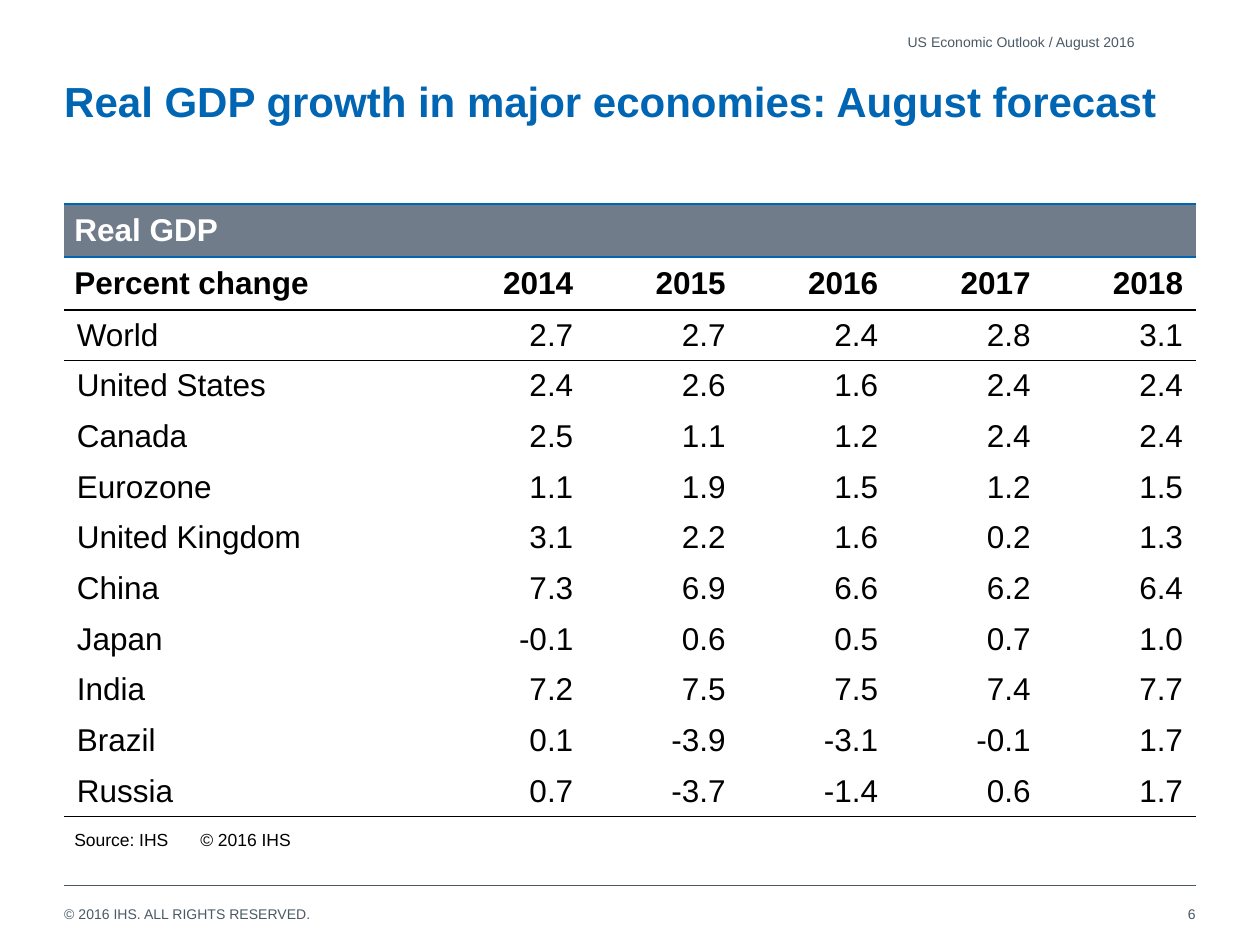
from lxml.etree import SubElement
from pptx import Presentation
from pptx.dml.color import RGBColor
from pptx.enum.shapes import MSO_CONNECTOR
from pptx.enum.text import MSO_ANCHOR, PP_ALIGN
from pptx.oxml import parse_xml
from pptx.oxml.ns import nsdecls, qn
from pptx.util import Inches, Pt

BLUE, GREY, SLATE, BLACK, WHITE = "0066B3", "495965", "707C8A", "000000", "FFFFFF"
LEFT, WIDTH = 0.51, 8.98
RIGHT = LEFT + WIDTH
TABLE_TOP, TABLE_HEIGHT = 1.62, 4.86
HEADER_HEIGHT, VALUE_WIDTH = 0.42, 1.21
NO_TABLE_STYLE = "{2D5ABB26-0587-4C30-8999-92F81FD0307C}"

TITLE = "Real GDP growth in major economies: August forecast"
ROWS = [
    ("Real GDP", "", "", "", "", ""),
    ("Percent change", "2014", "2015", "2016", "2017", "2018"),
    ("World", "2.7", "2.7", "2.4", "2.8", "3.1"),
    ("United States", "2.4", "2.6", "1.6", "2.4", "2.4"),
    ("Canada", "2.5", "1.1", "1.2", "2.4", "2.4"),
    ("Eurozone", "1.1", "1.9", "1.5", "1.2", "1.5"),
    ("United Kingdom", "3.1", "2.2", "1.6", "0.2", "1.3"),
    ("China", "7.3", "6.9", "6.6", "6.2", "6.4"),
    ("Japan", "-0.1", "0.6", "0.5", "0.7", "1.0"),
    ("India", "7.2", "7.5", "7.5", "7.4", "7.7"),
    ("Brazil", "0.1", "-3.9", "-3.1", "-0.1", "1.7"),
    ("Russia", "0.7", "-3.7", "-1.4", "0.6", "1.7"),
]
LAST = len(ROWS) - 1
RULES = {
    0: {"lnT": BLUE, "lnB": BLUE},
    1: {"lnT": BLUE, "lnB": BLACK},
    2: {"lnT": BLACK},
    LAST: {"lnB": BLACK},
}


def color(hex_value):
    return RGBColor.from_string(hex_value)


def style(paragraph, size, hex_value, bold=False, align=PP_ALIGN.LEFT):
    paragraph.alignment = align
    font = paragraph.font
    font.name, font.size, font.bold = "Arial", Pt(size), bold
    font.color.rgb = color(hex_value)


def set_frame(frame, inset, anchor):
    frame.word_wrap = True
    frame.vertical_anchor = anchor
    frame.margin_left = frame.margin_right = Inches(inset)
    frame.margin_top = frame.margin_bottom = Inches(inset)


def add_text(slide, text, box, size, hex_value, align=PP_ALIGN.LEFT,
             inset=0, anchor=MSO_ANCHOR.MIDDLE, tab=None):
    frame = slide.shapes.add_textbox(*map(Inches, box)).text_frame
    set_frame(frame, inset, anchor)
    paragraph = frame.paragraphs[0]
    paragraph.text = text
    if tab:
        tabs = SubElement(paragraph._p.get_or_add_pPr(), qn("a:tabLst"))
        SubElement(tabs, qn("a:tab"), pos=str(Inches(tab)), algn="l")
    style(paragraph, size, hex_value, align=align)


def add_title(slide):
    title = slide.shapes.title
    title.left, title.top = Inches(LEFT), Inches(0.6)
    title.width, title.height = Inches(WIDTH), Inches(0.87)
    title.text_frame.text = TITLE
    set_frame(title.text_frame, 0, MSO_ANCHOR.TOP)
    style(title.text_frame.paragraphs[0], 24, BLUE, bold=True)


def add_footer_line(slide):
    line = slide.shapes.add_connector(
        MSO_CONNECTOR.STRAIGHT, Inches(LEFT), Inches(7.03), Inches(RIGHT), Inches(7.03))
    line.line.color.rgb = color(GREY)
    line.line.width = Pt(0.5)
    SubElement(line._element.spPr, qn("a:effectLst"))


def set_borders(cell, rules):
    properties = cell._tc.get_or_add_tcPr()
    for index, (side, hex_value) in enumerate(rules.items()):
        properties.insert(index, parse_xml(
            f'<a:{side} {nsdecls("a")} w="{Pt(1)}"><a:solidFill>'
            f'<a:srgbClr val="{hex_value}"/></a:solidFill></a:{side}>'))


def format_cell(cell, row, column, text):
    cell.text = text
    cell.vertical_anchor = MSO_ANCHOR.MIDDLE
    if row < 2 and column == 0:
        cell.margin_left = cell.margin_right = Inches(0.08)
        cell.margin_top = cell.margin_bottom = Inches(0.06)
    if row == 0:
        cell.fill.solid()
        cell.fill.fore_color.rgb = color(SLATE)
    else:
        cell.fill.background()
    style(cell.text_frame.paragraphs[0], 18, WHITE if row == 0 else BLACK,
          bold=row < 2, align=PP_ALIGN.RIGHT if column else PP_ALIGN.LEFT)
    set_borders(cell, RULES.get(row, {}))


def add_gdp_table(slide):
    columns = len(ROWS[0])
    table = slide.shapes.add_table(
        len(ROWS), columns, Inches(LEFT), Inches(TABLE_TOP),
        Inches(WIDTH), Inches(TABLE_HEIGHT)).table
    table._tbl.tblPr.find(qn("a:tableStyleId")).text = NO_TABLE_STYLE
    table.horz_banding = False
    label_width = WIDTH - VALUE_WIDTH * (columns - 1)
    body_height = (TABLE_HEIGHT - 2 * HEADER_HEIGHT) / (len(ROWS) - 2)
    for index, column in enumerate(table.columns):
        column.width = Inches(VALUE_WIDTH if index else label_width)
    for row, values in enumerate(ROWS):
        table.rows[row].height = Inches(HEADER_HEIGHT if row < 2 else body_height)
        for column, text in enumerate(values):
            format_cell(table.cell(row, column), row, column, text)


def main():
    presentation = Presentation()
    presentation.slide_width, presentation.slide_height = Inches(10), Inches(7.5)
    slide = presentation.slides.add_slide(presentation.slide_layouts[5])
    add_text(slide, "© 2016 IHS. ALL RIGHTS RESERVED.", (LEFT, 7.19, 6.85, 0.13),
             8, GREY, anchor=MSO_ANCHOR.TOP)
    add_footer_line(slide)
    add_title(slide)
    add_text(slide, "6", (RIGHT - 2.26, 7.05, 2.26, 0.4), 8, GREY, PP_ALIGN.RIGHT)
    add_text(slide, "US Economic Outlook / August 2016", (LEFT, 0.21, 8.5, 0.24),
             8, GREY, PP_ALIGN.RIGHT)
    add_gdp_table(slide)
    add_text(slide, "Source: IHS\t© 2016 IHS", (LEFT, 6.51, WIDTH, 0.31),
             10, BLACK, inset=0.08, tab=1)
    presentation.save("out.pptx")


if __name__ == "__main__":
    main()
